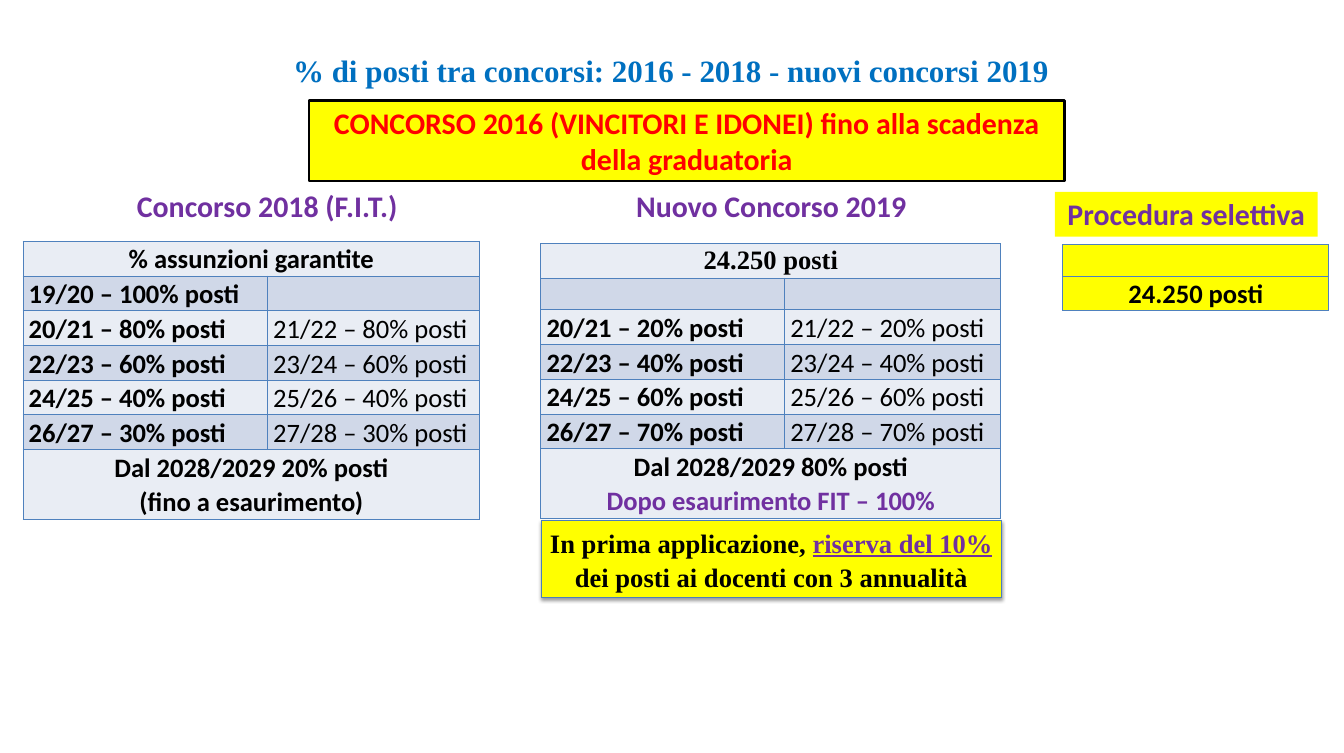
from lxml import etree
from pptx import Presentation
from pptx.dml.color import RGBColor
from pptx.enum.shapes import MSO_SHAPE
from pptx.enum.text import MSO_ANCHOR, PP_ALIGN
from pptx.oxml import parse_xml
from pptx.oxml.ns import nsdecls, qn
from pptx.util import Inches, Pt

RECTANGLE = MSO_SHAPE.RECTANGLE
TOP, MIDDLE = MSO_ANCHOR.TOP, MSO_ANCHOR.MIDDLE
CENTER, JUSTIFY = PP_ALIGN.CENTER, PP_ALIGN.JUSTIFY
SERIF, SANS = "Times New Roman", "Calibri"
COLORS = {
    "title": "0070C0", "purple": "7030A0", "red": "FF0000", "black": "000000",
    "yellow": "FFFF00", "light": "E9EDF4", "dark": "D0D8E8",
    "border": "4F81BD", "note_line": "4B7EBC",
}
HEADING = {"size": Pt(27), "name": SANS, "bold": True, "color": "purple"}
BOLD = {"size": Pt(24), "name": SANS, "bold": True, "color": "black"}
PLAIN = {**BOLD, "bold": False}
CELL_PARAGRAPH = {"line_spacing": 1.07}
CELL_MARGINS = {
    "margin_left": Inches(0.07), "margin_right": Inches(0.07),
    "margin_top": 0, "margin_bottom": 0,
}


def color(name):
    """Return the named colour."""
    return RGBColor.from_string(COLORS[name])


def apply_format(target, values):
    """Set attributes from a dict of format values."""
    for name, value in values.items():
        setattr(target, name, value)


class SlideBuilder:
    """Holds the style and the current slide."""

    def __init__(self, presentation):
        """Add a slide with a title."""
        self.slide = presentation.slides.add_slide(presentation.slide_layouts[5])

    def fill_text(self, frame, lines, alignment=CENTER, **paragraph_format):
        """Fill a text frame with lines of (text, format) runs."""
        frame.word_wrap = True
        for index, runs in enumerate(lines):
            paragraph = frame.add_paragraph() if index else frame.paragraphs[0]
            apply_format(paragraph, {"alignment": alignment, **paragraph_format})
            for text, font_format in runs:
                run = paragraph.add_run()
                run.text = text
                values = dict(font_format)
                run.font.color.rgb = color(values.pop("color"))
                apply_format(run.font, values)

    def title(self, box, text, font_format):
        """Move and fill the title placeholder."""
        shape = self.slide.shapes.title
        sides = ("left", "top", "width", "height")
        apply_format(shape, dict(zip(sides, map(Inches, box))))
        shape.text_frame.vertical_anchor = MIDDLE
        self.fill_text(shape.text_frame, [[(text, font_format)]])

    def label(self, box, text, font_format):
        """Add a text box with one line."""
        shape = self.slide.shapes.add_textbox(*map(Inches, box))
        self.fill_text(shape.text_frame, [[(text, font_format)]])

    def panel(self, box, runs, line=None, width=0, shadow=False, **paragraph_format):
        """Add a yellow rectangle with text."""
        shape = self.slide.shapes.add_shape(RECTANGLE, *map(Inches, box))
        shape.shadow.inherit = False
        shape.fill.solid()
        shape.fill.fore_color.rgb = color("yellow")
        if line:
            shape.line.color.rgb = color(line)
            shape.line.width = Pt(width)
        else:
            shape.line.fill.background()
        if shadow:
            shape._element.spPr.find(qn("a:effectLst")).append(parse_xml(
                f'<a:outerShdw {nsdecls("a")} blurRad="{Pt(3.1)}" dist="{Pt(1.6)}" '
                f'dir="5400000" rotWithShape="0"><a:srgbClr val="{COLORS["black"]}">'
                '<a:alpha val="38000"/></a:srgbClr></a:outerShdw>'))
        shape.text_frame.vertical_anchor = TOP
        self.fill_text(shape.text_frame, [runs], **paragraph_format)

    def border(self, cell):
        """Draw thin lines on all sides of a cell."""
        properties = cell._tc.get_or_add_tcPr()
        for index, side in enumerate(("lnL", "lnR", "lnT", "lnB")):
            line = etree.Element(qn(f"a:{side}"), w=str(Pt(1)))
            fill = etree.SubElement(line, qn("a:solidFill"))
            etree.SubElement(fill, qn("a:srgbClr"), val=COLORS["border"])
            properties.insert(index, line)

    def table(self, position, widths, heights, rows, fills):
        """Add a table; a row with fewer cells than columns is merged."""
        size = (sum(widths), sum(heights))
        table = self.slide.shapes.add_table(
            len(rows), len(widths), *map(Inches, position + size)).table
        apply_format(table, {"first_row": False, "horz_banding": False})
        for column, width in zip(table.columns, widths):
            column.width = Inches(width)
        for index, (row, height, contents) in enumerate(zip(table.rows, heights, rows)):
            row.height = Inches(height)
            for cell in row.cells:
                apply_format(cell, CELL_MARGINS)
                cell.fill.solid()
                cell.fill.fore_color.rgb = color(fills[index % len(fills)])
                self.border(cell)
            single = len(contents) == 1
            if single and len(widths) > 1:
                table.cell(index, 0).merge(table.cell(index, len(widths) - 1))
            for column, lines in enumerate(contents):
                self.fill_text(table.cell(index, column).text_frame, lines,
                               CENTER if single else JUSTIFY, **CELL_PARAGRAPH)


def share_rows(shares):
    """Return one row of two school years for each share."""
    def entry(year, share, font_format):
        """Return the line for one school year."""
        return [[(f"{year}/{year + 1} – {share}% posti", font_format)]]
    return [[entry(year, share, BOLD), entry(year + 1, share, PLAIN)]
            for year, share in zip(range(20, 28, 2), shares)]


def main():
    """Build the slide and save it."""
    presentation = Presentation()
    presentation.slide_width, presentation.slide_height = Inches(16.87), Inches(9.45)
    builder = SlideBuilder(presentation)
    builder.title((0.5, 0.6, 15.84, 0.57),
                  "% di posti tra concorsi: 2016 - 2018 - nuovi concorsi 2019",
                  {"size": Pt(28), "name": SERIF, "bold": True, "color": "title"})

    fit_shares = (80, 60, 40, 30)
    fit_rows = [
        [[[("% assunzioni garantite", BOLD)]]],
        [[[("19/20 – 100% posti", BOLD)]], []],
        *share_rows(fit_shares),
        [[[("Dal 2028/2029 20% posti", BOLD)], [("(fino a esaurimento)", BOLD)]]],
    ]
    new_rows = [
        [[[("24.250 posti", {**BOLD, "name": SERIF})]]],
        [[], []],
        *share_rows([100 - share for share in fit_shares]),
        [[[("Dal 2028/2029 80% posti", BOLD)],
          [("Dopo esaurimento FIT – 100%", {**BOLD, "color": "purple"})]]],
    ]
    bands = ("light", "dark")
    builder.table((0.29, 3.03), (3.07, 2.66), [0.43] * 6 + [0.86], fit_rows, bands)

    note = {**BOLD, "name": SERIF}
    builder.panel((6.79, 6.53, 5.78, 0.97), [
        ("In prima applicazione, ", note),
        ("riserva del 10%", {**note, "color": "purple", "underline": True}),
        (" dei posti ai docenti con 3 annualità", note),
    ], "note_line", 0.75, True, line_spacing=1.07, space_after=Pt(8))
    builder.table((6.79, 3.06), (3.06, 2.71), [0.43, 0.4] + [0.43] * 4 + [0.86],
                  new_rows, bands)

    builder.label((0.29, 2.31, 6.13, 0.56), "Concorso 2018 (F.I.T.)", HEADING)
    builder.label((6.79, 2.31, 5.78, 0.56), "Nuovo Concorso 2019", HEADING)
    builder.panel((3.88, 1.26, 9.48, 1.01), [
        ("CONCORSO 2016 (VINCITORI E IDONEI) fino alla scadenza della graduatoria",
         {**HEADING, "color": "red"})], "black", 2.25)
    builder.table((13.34, 3.07), (3.34,), (0.4, 0.43),
                  [[[]], [[[("24.250 posti", BOLD)]]]], ("yellow",))
    builder.panel((13.24, 2.41, 3.3, 0.56), [("Procedura selettiva", HEADING)])
    presentation.save("out.pptx")


if __name__ == "__main__":
    main()
